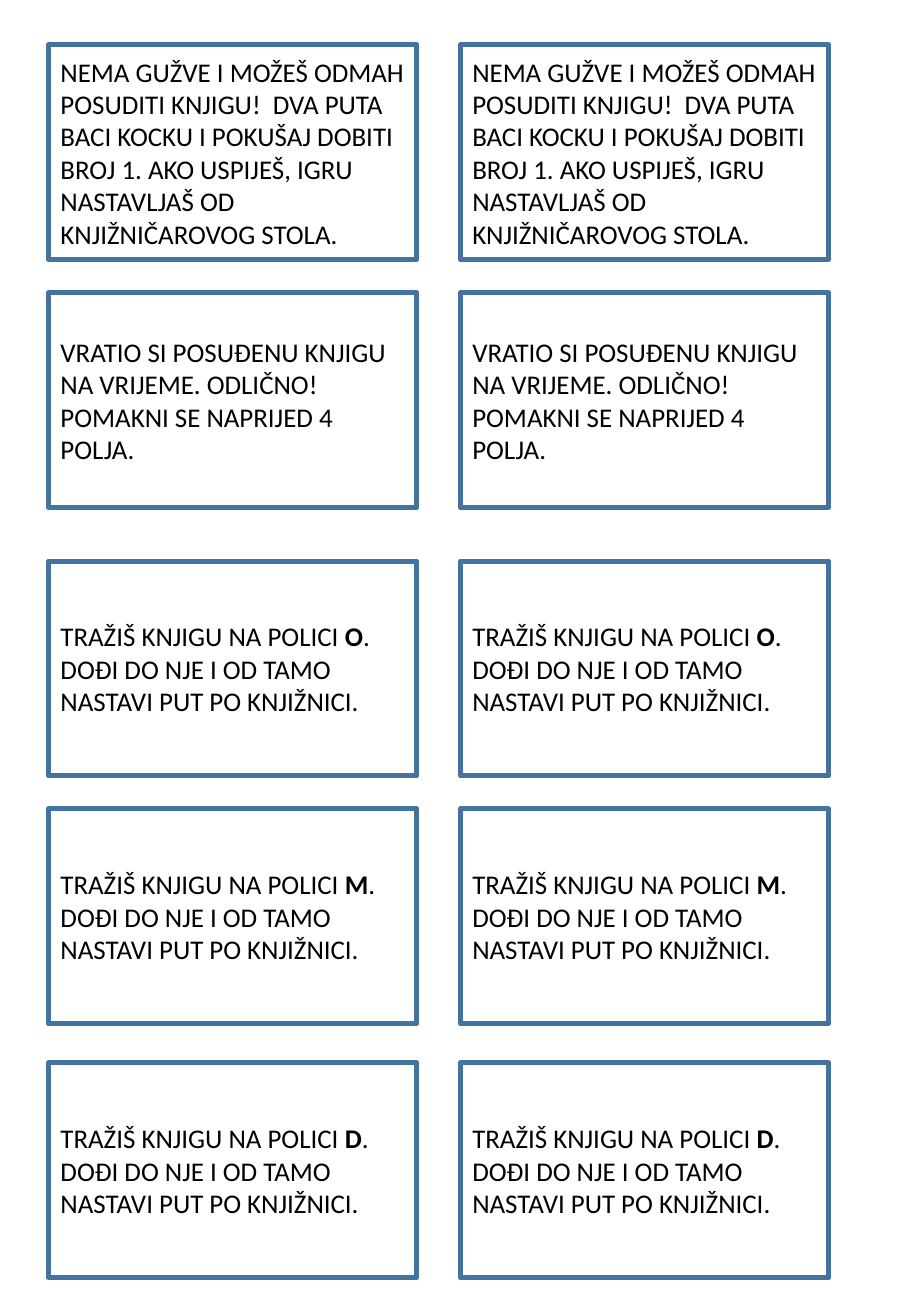
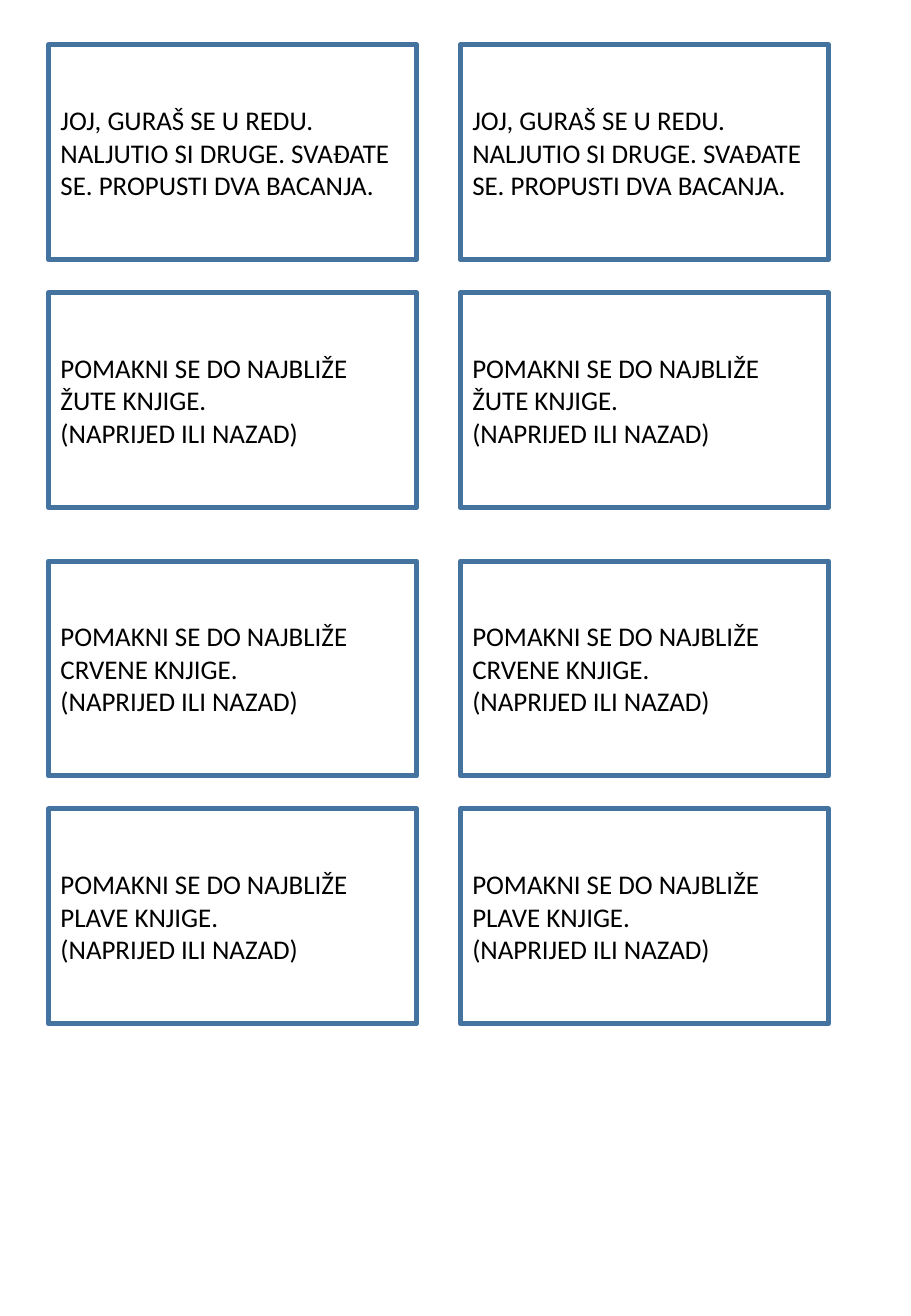
from pptx import Presentation
from pptx.dml.color import RGBColor
from pptx.enum import shapes, text
from pptx.util import Pt

# Content: one entry per row of cards; each card is a list of paragraphs,
# each paragraph a list of (text, bold) runs


def shelf(letter):
    return [[("TRAŽIŠ KNJIGU NA POLICI ", False), (letter, True),
             (". DOĐI DO NJE I OD TAMO NASTAVI PUT PO KNJIŽNICI.", False)]]


def nearest(colour):
    return [[(f"POMAKNI SE DO NAJBLIŽE {colour} KNJIGE.", False)],
            [("(NAPRIJED ILI NAZAD)", False)]]


def plain(words):
    return [[(words, False)]]


SLIDES = [
    [
        plain("NEMA GUŽVE I MOŽEŠ ODMAH POSUDITI KNJIGU!  DVA PUTA BACI KOCKU "
              "I POKUŠAJ DOBITI BROJ 1. AKO USPIJEŠ, IGRU NASTAVLJAŠ OD "
              "KNJIŽNIČAROVOG STOLA."),
        plain("VRATIO SI POSUĐENU KNJIGU NA VRIJEME. ODLIČNO! "
              "POMAKNI SE NAPRIJED 4 POLJA."),
        shelf("O"),
        shelf("M"),
        shelf("D"),
    ],
    [
        plain("JOJ, GURAŠ SE U REDU. NALJUTIO SI DRUGE. SVAĐATE SE. "
              "PROPUSTI DVA BACANJA."),
        nearest("ŽUTE"),
        nearest("CRVENE"),
        nearest("PLAVE"),
    ],
]

# Shared card style and grid, in points
FONT, SIZE = "Calibri", 16
INK, PAPER, BORDER = "000000", "FFFFFF", "43739E"
CARD_W, CARD_H = 218.2, 127.4
COLUMNS = (28.8, 272.9)
ROWS = (26.6, 173.5, 332.6, 479.5, 630)


def rgb(value):
    return RGBColor.from_string(value)


def add_run(p, words, size=SIZE, bold=False, color=INK):
    r = p.add_run()
    r.text = words
    r.font.name = FONT
    r.font.size = Pt(size)
    r.font.bold = bold
    r.font.color.rgb = rgb(color)


def add_card(s, left, top, paragraphs):
    sp = s.shapes.add_shape(shapes.MSO_SHAPE.RECTANGLE, Pt(left), Pt(top),
                            Pt(CARD_W), Pt(CARD_H))
    sp.shadow.inherit = False
    sp.fill.solid()
    sp.fill.fore_color.rgb = rgb(PAPER)
    sp.line.color.rgb = rgb(BORDER)
    sp.line.width = Pt(3)
    tf = sp.text_frame
    tf.word_wrap = True
    tf.vertical_anchor = text.MSO_ANCHOR.MIDDLE
    for i, runs in enumerate(paragraphs):
        p = tf.add_paragraph() if i else tf.paragraphs[0]
        p.alignment = text.PP_ALIGN.LEFT
        for words, bold in runs:
            add_run(p, words, bold=bold)


def main():
    prs = Presentation()
    prs.slide_width, prs.slide_height = Pt(540), Pt(780)
    blank = prs.slide_layouts[6]
    for cards in SLIDES:
        s = prs.slides.add_slide(blank)
        # Each card appears once in every column
        for top, paragraphs in zip(ROWS, cards):
            for left in COLUMNS:
                add_card(s, left, top, paragraphs)
    prs.save("out.pptx")


if __name__ == "__main__":
    main()
